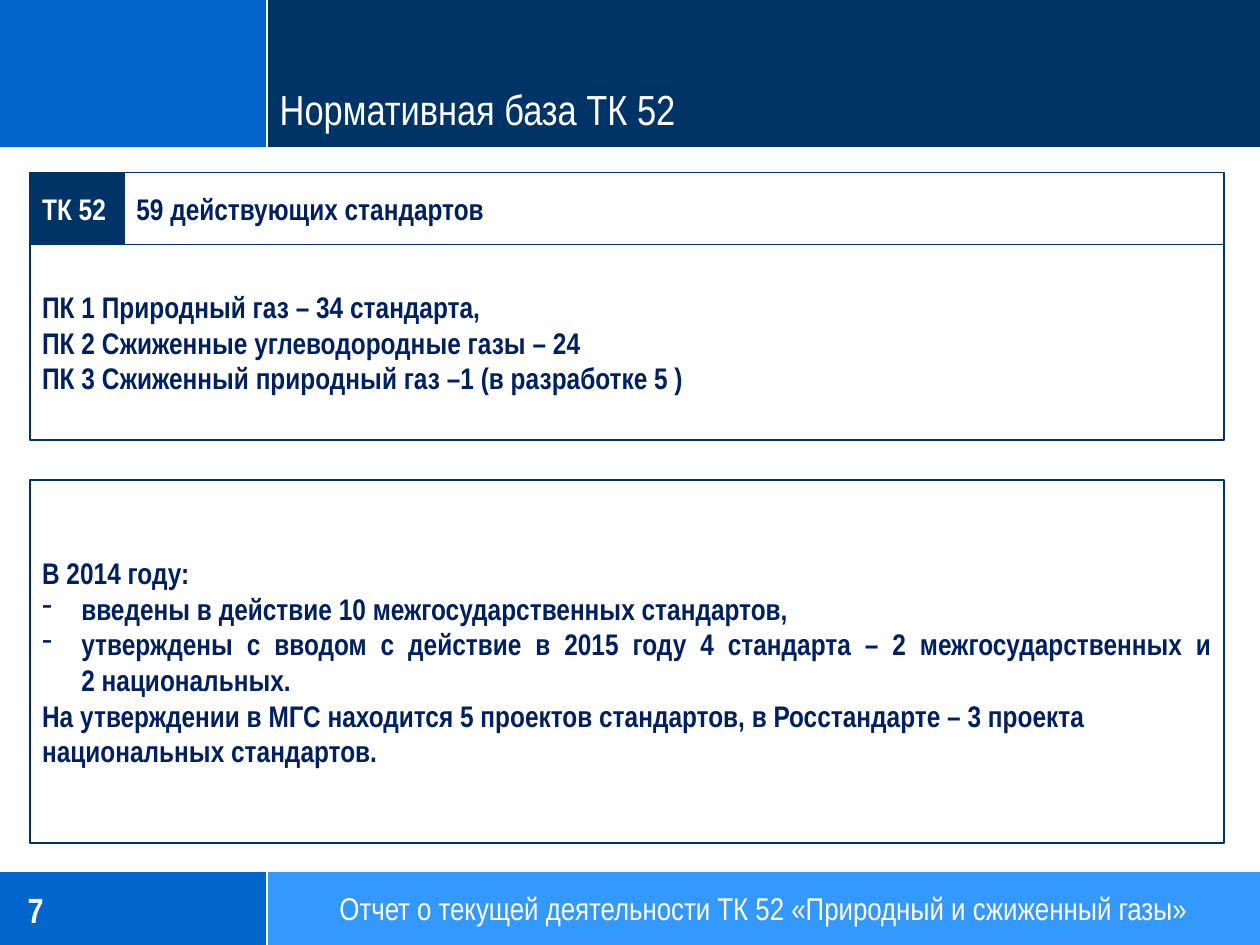
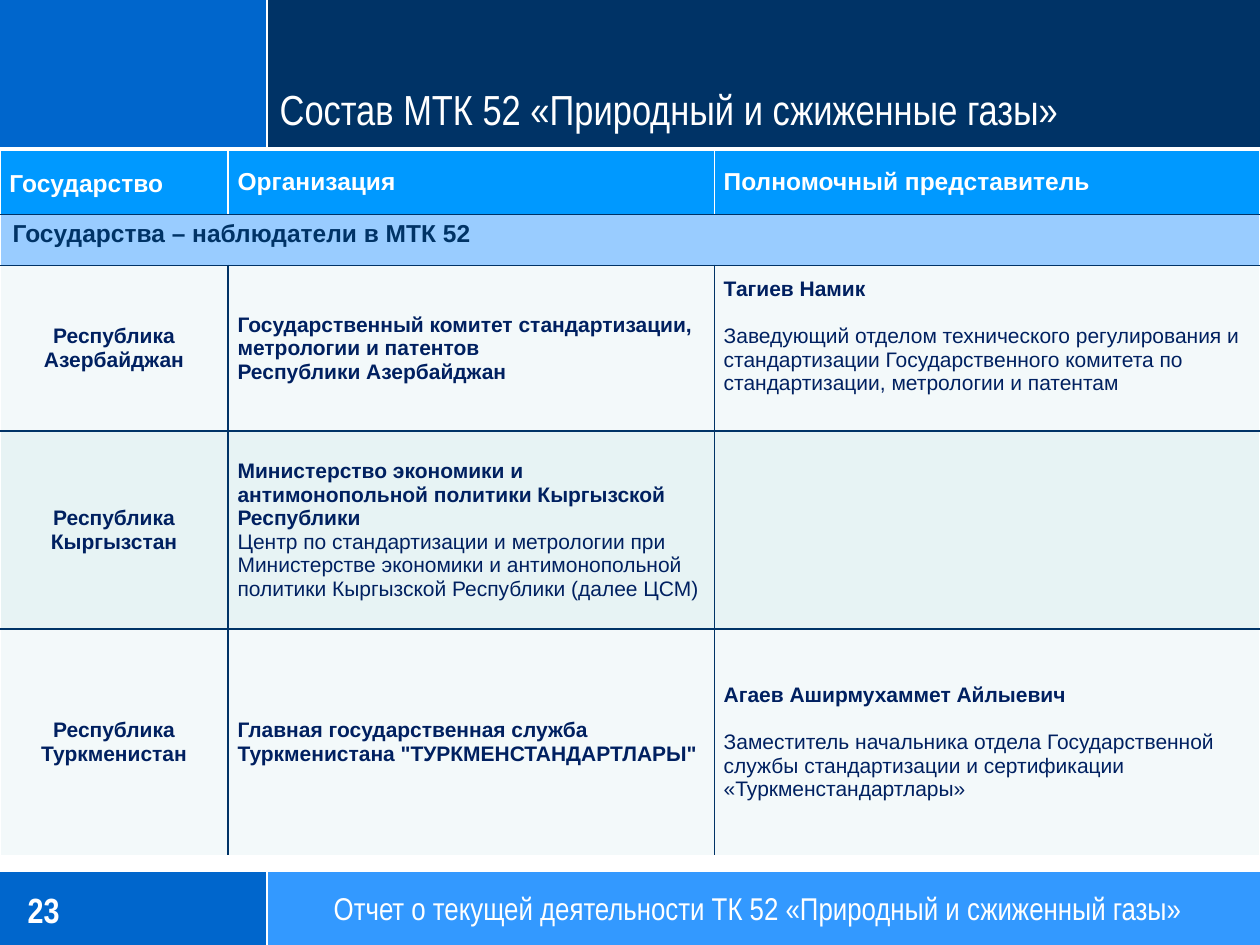
from dataclasses import dataclass

from lxml import etree
from pptx import Presentation
from pptx.dml.color import RGBColor
from pptx.enum.shapes import MSO_CONNECTOR, MSO_SHAPE
from pptx.enum.text import MSO_ANCHOR, PP_ALIGN
from pptx.oxml.ns import qn
from pptx.util import Cm, Pt

RECTANGLE = MSO_SHAPE.RECTANGLE
STRAIGHT = MSO_CONNECTOR.STRAIGHT
TOP, MIDDLE, BOTTOM = MSO_ANCHOR.TOP, MSO_ANCHOR.MIDDLE, MSO_ANCHOR.BOTTOM
LEFT, CENTER, JUSTIFY = PP_ALIGN.LEFT, PP_ALIGN.CENTER, PP_ALIGN.JUSTIFY


@dataclass(frozen=True)
class Theme:
    narrow: str = "Arial Narrow"
    regular: str = "Arial"
    white: str = "FFFFFF"
    navy: str = "003366"
    ink: str = "002060"
    corner: str = "0066CC"
    footer: str = "3399FF"
    head_row: str = "0099FF"
    section_row: str = "99CCFF"
    light_row: str = "F3F9FA"
    tinted_row: str = "E7F3F4"
    title_size: float = 24
    number_size: float = 20
    footer_size: float = 18
    panel_size: float = 17
    head_size: float = 14
    cell_size: float = 12
    rule_width: float = 1.25
    border_width: float = 1


@dataclass(frozen=True)
class Box:
    left: float
    top: float
    width: float
    height: float

    def inner(self, left, top, width, height):
        return Box(self.left + left, self.top + top, width, height)

    def lengths(self):
        return [Cm(value) for value in (self.left, self.top, self.width, self.height)]


THEME = Theme()
PAGE = Box(0, 0, 25.4, 19.05)
HEADER = Box(0, 0, 25.4, 2.98)
FOOTER = Box(0, 17.55, 25.4, 1.5)
CORNER_WIDTH = 5.38
FOOTER_TEXT = "Отчет о текущей деятельности ТК 52 «Природный и сжиженный газы»"

COUNT_LINES = [
    "ПК 1 Природный газ – 34 стандарта,",
    "ПК 2 Сжиженные углеводородные газы – 24",
    "ПК 3 Сжиженный природный газ –1 (в разработке 5 )",
]
YEAR_LINES = [
    "В 2014 году:",
    "введены в действие 10 межгосударственных стандартов,",
    "утверждены с вводом с действие в 2015 году 4 стандарта – 2 межгосударственных и"
    "\v2 национальных.",
    "На утверждении в МГС находится 5 проектов стандартов, "
    "в Росстандарте – 3 проекта национальных стандартов.",
]
COLUMN_WIDTHS = [4.6, 9.8, 11]
ROW_HEIGHTS = [1.29, 1.03, 3.34, 3.99, 4.57]
HEADINGS = ["Государство", "Организация", "Полномочный представитель"]
SECTION = "Государства – наблюдатели в МТК 52"
OBSERVERS = [
    [
        ["Республика Азербайджан"],
        ["Государственный комитет стандартизации, метрологии и патентов"
         "\vРеспублики Азербайджан"],
        ["Тагиев Намик",
         "Заведующий отделом технического регулирования и стандартизации "
         "Государственного комитета по стандартизации, метрологии и патентам"],
    ],
    [
        ["Республика Кыргызстан"],
        ["Министерство экономики и антимонопольной политики Кыргызской Республики",
         "Центр по стандартизации и метрологии при Министерстве экономики и "
         "антимонопольной политики Кыргызской Республики (далее ЦСМ)"],
        [],
    ],
    [
        ["Республика Туркменистан"],
        ['Главная государственная служба Туркменистана "ТУРКМЕНСТАНДАРТЛАРЫ"'],
        ["Агаев Аширмухаммет Айлыевич",
         "Заместитель начальника отдела Государственной службы стандартизации "
         "и сертификации «Туркменстандартлары»"],
    ],
]


def colour(code):
    return RGBColor.from_string(code)


def format_para(para, size, code, bold=False, align=LEFT, font=THEME.narrow):
    para.alignment = align
    for span in para.runs:
        span.font.name = font
        span.font.size = Pt(size)
        span.font.bold = bold
        span.font.color.rgb = colour(code)


def add_rectangle(page, box, fill=None, line=None):
    shape = page.shapes.add_shape(RECTANGLE, *box.lengths())
    shape.shadow.inherit = False
    if fill:
        shape.fill.solid()
        shape.fill.fore_color.rgb = colour(fill)
    else:
        shape.fill.background()
    if line:
        shape.line.color.rgb = colour(line)
        shape.line.width = Pt(THEME.border_width)
    else:
        shape.line.fill.background()
    return shape


def add_rule(page, left, top, right, bottom):
    ends = [Cm(value) for value in (left, top, right, bottom)]
    rule = page.shapes.add_connector(STRAIGHT, *ends)
    rule.line.color.rgb = colour(THEME.white)
    rule.line.width = Pt(THEME.rule_width)
    etree.SubElement(rule._element.spPr, qn("a:effectLst"))


def add_label(page, box, text, size, bold=False, align=LEFT, anchor=MIDDLE):
    frame = page.shapes.add_textbox(*box.lengths()).text_frame
    frame.margin_left = frame.margin_right = frame.margin_top = frame.margin_bottom = 0
    frame.word_wrap = True
    frame.vertical_anchor = anchor
    frame.text = text
    format_para(frame.paragraphs[0], size, THEME.white, bold, align)


def add_band(page, box, fill):
    add_rectangle(page, box.inner(0, 0, CORNER_WIDTH, box.height), THEME.corner)
    main = box.inner(CORNER_WIDTH, 0, box.width - CORNER_WIDTH, box.height)
    add_rectangle(page, main, fill)
    add_rule(page, main.left, main.top, main.left, main.top + main.height)


def add_header(page, box, title):
    add_band(page, box, THEME.navy)
    bottom = box.top + box.height
    add_rule(page, box.left, bottom, box.left + box.width, bottom)
    add_label(page, box.inner(5.64, 1.42, 19.72, 1.27), title,
              THEME.title_size, anchor=BOTTOM)


def add_footer(page, box, number, text_left, text_width):
    add_band(page, box, THEME.footer)
    add_rule(page, box.left, box.top, box.left + box.width, box.top)
    add_label(page, box.inner(0.56, 0.13, 4.14, 1.32), number,
              THEME.number_size, bold=True)
    add_label(page, box.inner(text_left, 0, text_width, box.height), FOOTER_TEXT,
              THEME.footer_size, align=CENTER)


def add_page(deck, title, number, text_left, text_width):
    page = deck.slides.add_slide(deck.slide_layouts[6])
    add_header(page, HEADER, title)
    add_footer(page, FOOTER, number, text_left, text_width)
    return page


def add_panel(page, box, lines, fill=None, code=THEME.ink, align=LEFT):
    frame = add_rectangle(page, box, fill, THEME.navy).text_frame
    frame.word_wrap = True
    frame.vertical_anchor = MIDDLE
    frame.text = "\n".join(lines)
    for para in frame.paragraphs:
        format_para(para, THEME.panel_size, code, True, align)
    return frame.paragraphs


def add_dash(para):
    properties = para._p.get_or_add_pPr()
    properties.set("marL", str(Cm(0.79)))
    properties.set("indent", str(-Cm(0.79)))
    etree.SubElement(properties, qn("a:buFontTx"))
    etree.SubElement(properties, qn("a:buChar")).set("char", "-")


def add_counts(page, box):
    tag_width, head_height = 1.9, 1.45
    add_panel(page, box.inner(0, 0, tag_width, head_height), ["ТК 52"],
              THEME.navy, THEME.white)
    add_panel(page, box.inner(tag_width, 0, box.width - tag_width, head_height),
              ["59 действующих стандартов"])
    add_panel(page, box.inner(0, head_height, box.width, box.height - head_height),
              COUNT_LINES)


def add_year(page, box):
    paras = add_panel(page, box, YEAR_LINES, align=JUSTIFY)
    for para in paras[1:3]:
        add_dash(para)
    paras[3].alignment = LEFT


def border_cell(cell, sides):
    properties = cell._tc.get_or_add_tcPr()
    for side, code in sides.items():
        line = etree.SubElement(properties, qn("a:ln" + side))
        line.set("w", str(Pt(THEME.border_width)))
        fill = etree.SubElement(line, qn("a:solidFill"))
        etree.SubElement(fill, qn("a:srgbClr")).set("val", code)


def style_cell(cell, row, column, fill):
    last_row, last_column = len(ROW_HEIGHTS) - 1, len(COLUMN_WIDTHS) - 1
    white_edges = {
        "L": row < 2 or column == 0,
        "R": row < 2 or column == last_column,
        "T": row == 0,
        "B": row == last_row,
    }
    border_cell(cell, {side: THEME.white if is_white else THEME.navy
                       for side, is_white in white_edges.items()})
    cell.fill.solid()
    cell.fill.fore_color.rgb = colour(fill)
    cell.vertical_anchor = TOP if row == 1 else MIDDLE
    if row != 1:
        cell.margin_left = cell.margin_right = Cm(0.19)
        cell.margin_top = cell.margin_bottom = 0


def fill_observer(cell, texts, column):
    cell.text = "\n".join(texts)
    for index, para in enumerate(cell.text_frame.paragraphs):
        format_para(para, THEME.cell_size, THEME.ink, index == 0,
                    CENTER if column == 0 else LEFT, THEME.regular)
    if column == 2 and texts:
        cell.text_frame.paragraphs[0].space_after = Pt(13.5)


def add_observers(page, box):
    table = page.shapes.add_table(
        len(ROW_HEIGHTS), len(COLUMN_WIDTHS), *box.lengths()).table
    table.first_row = table.horz_banding = False
    for column, width in zip(table.columns, COLUMN_WIDTHS):
        column.width = Cm(width)
    for row, height in zip(table.rows, ROW_HEIGHTS):
        row.height = Cm(height)

    fills = [THEME.head_row, THEME.section_row,
             THEME.light_row, THEME.tinted_row, THEME.light_row]
    for row, fill in enumerate(fills):
        for column in range(len(COLUMN_WIDTHS)):
            style_cell(table.cell(row, column), row, column, fill)

    for column, heading in enumerate(HEADINGS):
        cell = table.cell(0, column)
        cell.text = heading
        format_para(cell.text_frame.paragraphs[0], THEME.head_size, THEME.white,
                    True, font=THEME.regular)
    table.cell(0, 0).text_frame.paragraphs[0].line_spacing = 1.15

    section = table.cell(1, 0)
    section.merge(table.cell(1, 2))
    section.text = SECTION
    format_para(section.text_frame.paragraphs[0], THEME.head_size, THEME.navy,
                True, font=THEME.regular)

    for row, observer in enumerate(OBSERVERS, start=2):
        for column, texts in enumerate(observer):
            fill_observer(table.cell(row, column), texts, column)
    table.cell(2, 2).margin_bottom = Cm(0.48)


def main():
    deck = Presentation()
    deck.slide_width, deck.slide_height = Cm(PAGE.width), Cm(PAGE.height)

    standards = add_page(deck, "Нормативная база ТК 52", "7", CORNER_WIDTH, 20.02)
    add_counts(standards, Box(0.6, 3.48, 24.08, 5.39))
    add_year(standards, Box(0.6, 9.68, 24.08, 7.32))

    members = add_page(deck, "Состав МТК 52 «Природный и сжиженные газы»", "23",
                       5.79, 18.97)
    add_observers(members, Box(0, 3.03, sum(COLUMN_WIDTHS), sum(ROW_HEIGHTS)))

    deck.save("out.pptx")


if __name__ == "__main__":
    main()
